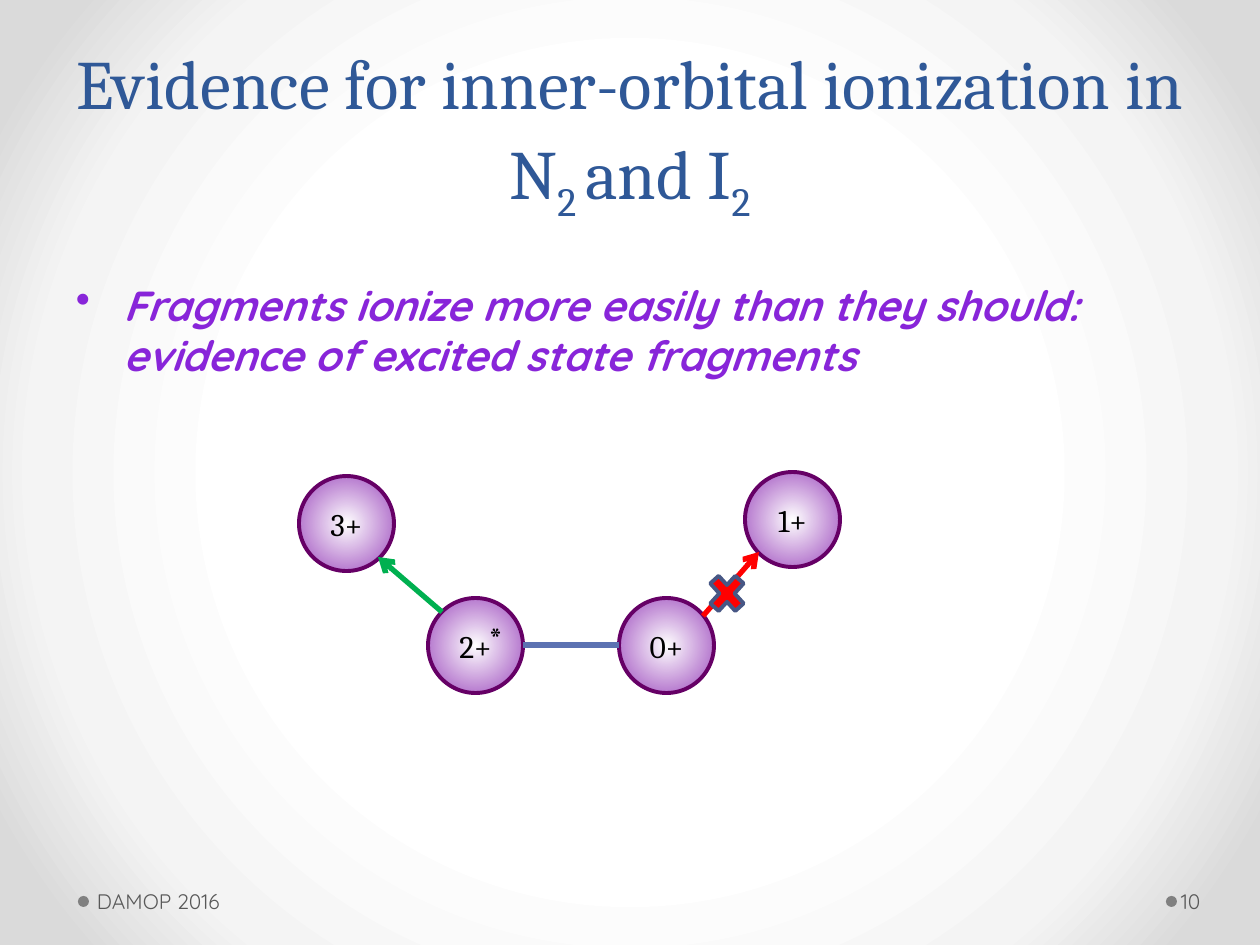
from lxml import etree
from pptx import Presentation
from pptx.dml.color import RGBColor
from pptx.enum.shapes import MSO_CONNECTOR, MSO_SHAPE
from pptx.enum.text import MSO_ANCHOR, PP_ALIGN
from pptx.oxml.ns import qn
from pptx.util import Emu, Pt

PX = 914400 / 126
OVAL, CROSS = MSO_SHAPE.OVAL, MSO_SHAPE.MATH_MULTIPLY
STRAIGHT = MSO_CONNECTOR.STRAIGHT
TOP, MIDDLE, BOTTOM = MSO_ANCHOR.TOP, MSO_ANCHOR.MIDDLE, MSO_ANCHOR.BOTTOM
CENTER = PP_ALIGN.CENTER

BLACK = RGBColor(0x00, 0x00, 0x00)
GREY = RGBColor(0x80, 0x80, 0x80)
FOOTER_GREY = RGBColor(0x59, 0x59, 0x59)
TITLE_BLUE = RGBColor(0x2F, 0x58, 0x97)
VIOLET = RGBColor(0x88, 0x25, 0xD9)
PLUM = RGBColor(0x66, 0x00, 0x66)
BOND_BLUE = RGBColor(0x5C, 0x72, 0xB2)
GREEN = RGBColor(0x00, 0xB0, 0x50)
RED = RGBColor(0xFF, 0x00, 0x00)
CROSS_EDGE = RGBColor(0x47, 0x57, 0x85)


def px(*lengths):
    return [Emu(round(length * PX)) for length in lengths]


def radial_gradient(owner, stops):
    """Turn the gradient already set on owner into a circular one."""
    gradient = owner.find(".//" + qn("a:gradFill"))
    gradient.clear()
    stop_list = etree.SubElement(gradient, qn("a:gsLst"))
    for percent, color in stops:
        stop = etree.SubElement(stop_list, qn("a:gs"), pos=str(percent * 1000))
        etree.SubElement(stop, qn("a:srgbClr"), val=color)
    circle = etree.SubElement(gradient, qn("a:path"), {"path": "circle"})
    etree.SubElement(circle, qn("a:fillToRect"), l="50000", t="50000", r="50000", b="50000")


prs = Presentation()
prs.slide_width, prs.slide_height = px(1260, 945)
slide = prs.slides.add_slide(prs.slide_layouts[6])
shapes = slide.shapes

# Background
slide.background.fill.gradient()
radial_gradient(slide.element, [(50, "FFFFFF"), (76, "F4F4F4"), (92, "DADADA")])

# Footer dots
for left in (1166, 78):
    dot = shapes.add_shape(OVAL, *px(left, 896, 11, 11))
    dot.shadow.inherit = False
    dot.fill.solid()
    dot.fill.fore_color.rgb = GREY
    dot.line.fill.background()

# Texts: box, insets, anchor, wrap, font, size, colour, runs
DEFAULT_INSETS = (13, 6, 13, 6)
texts = [
    ((63, 21, 1134, 210), DEFAULT_INSETS, BOTTOM, True, "Cambria", 39.6, TITLE_BLUE,
     ["Evidence for inner-orbital ionization in N", "2 ", "and I", "2"]),
    ((63, 273, 1155, 598), DEFAULT_INSETS, TOP, True, "Quicksand", 24, VIOLET,
     ["Fragments ionize more easily than they should: evidence of excited state fragments"]),
    ((91, 876, 392, 50), (6, 6, 13, 6), MIDDLE, True, "Quicksand", 12, FOOTER_GREY,
     ["DAMOP 2016"]),
    ((1177, 876, 77, 50), (4, 6, 6, 6), MIDDLE, True, "Quicksand", 12, FOOTER_GREY, ["10"]),
]
paragraphs = []
excited_mark = ((476, 612, 38, 50), DEFAULT_INSETS, TOP, False, "Cambria", 18, BLACK, ["*"])
for box, insets, anchor, wrap, font, size, color, parts in texts + [excited_mark]:
    frame = shapes.add_textbox(*px(*box)).text_frame
    frame.word_wrap = wrap
    frame.vertical_anchor = anchor
    (frame.margin_left, frame.margin_top,
     frame.margin_right, frame.margin_bottom) = px(*insets)
    paragraph = frame.paragraphs[0]
    for part in parts:
        run = paragraph.add_run()
        run.text = part
        run.font.name, run.font.size = font, Pt(size)
        run.font.color.rgb = color
    paragraphs.append(paragraph)

# Title: centred, with subscripts
title, statement = paragraphs[:2]
title.alignment = CENTER
title.line_spacing = Pt(58)
for subscript in title.runs[1::2]:
    subscript.font._element.set("baseline", "-25000")

# Statement: bold italic bullet
statement.space_before = Pt(4.8)
statement.runs[0].font.bold = statement.runs[0].font.italic = True
bullet_props = statement._p.get_or_add_pPr()
bullet_props.set("marL", "342900")
bullet_props.set("indent", "-342900")
etree.SubElement(bullet_props, qn("a:buChar"), char="•")

# Ions
for charge, left, top in [("2+", 428, 598), ("0+", 619, 598), ("1+", 745, 472), ("3+", 299, 476)]:
    ion = shapes.add_shape(OVAL, *px(left, top, 95, 95))
    ion.shadow.inherit = False
    ion.fill.gradient()
    radial_gradient(ion._element, [(0, "FFFFFF"), (100, "9943BB")])
    ion.line.color.rgb = PLUM
    ion.line.width = Pt(2.25)
    ion.text_frame.text = charge
    ion.text_frame.vertical_anchor = MIDDLE
    label = ion.text_frame.paragraphs[0]
    label.alignment = CENTER
    label_font = label.runs[0].font
    label_font.name, label_font.size = "Cambria", Pt(18)
    label_font.color.rgb = BLACK

# Bond, allowed and forbidden ionization
for ends, color, has_arrow in [
    ((619, 645, 523, 645), BOND_BLUE, False),
    ((442, 612, 378, 557), GREEN, True),
    ((703, 616, 759, 552), RED, True),
]:
    link = shapes.add_connector(STRAIGHT, *px(*ends))
    link.line.color.rgb = color
    link.line.width = Pt(3)
    if has_arrow:
        etree.SubElement(link.line._get_or_add_ln(), qn("a:tailEnd"), type="arrow")
    etree.SubElement(link._element.spPr, qn("a:effectLst"))

# Cross over the forbidden step
cross = shapes.add_shape(CROSS, *px(703, 567, 48, 53))
cross.shadow.inherit = False
cross.fill.solid()
cross.fill.fore_color.rgb = RED
cross.line.color.rgb = CROSS_EDGE
cross.line.width = Pt(2.25)

# Excited-state mark in front of its ion
shapes._spTree.append(paragraphs[-1]._p.getparent().getparent())

prs.save("out.pptx")
